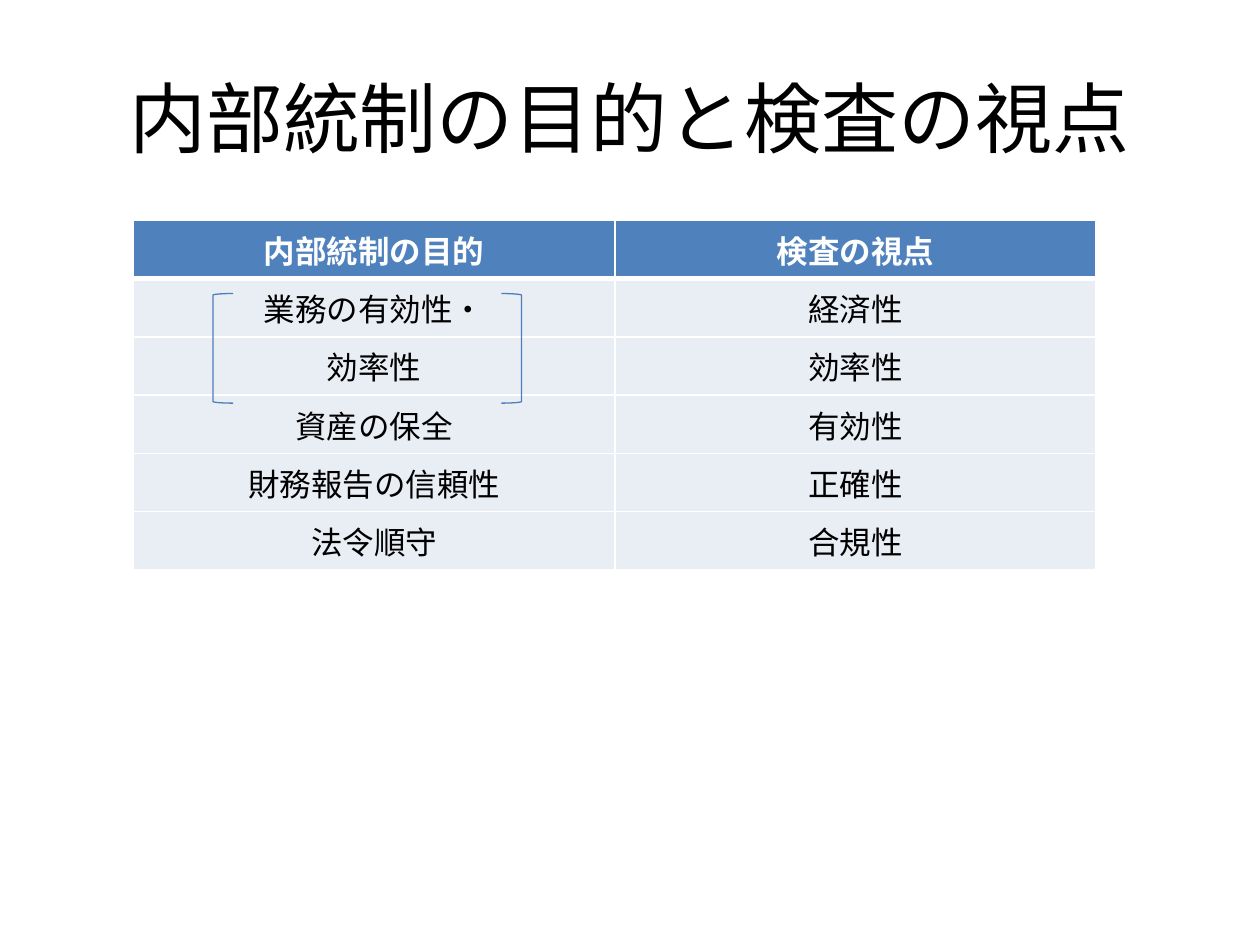
from dataclasses import dataclass

from lxml.etree import SubElement
from pptx import Presentation
from pptx.dml.color import RGBColor as RGB
from pptx.enum.shapes import MSO_SHAPE as Shape
from pptx.enum.text import MSO_ANCHOR as Anchor, PP_ALIGN as Align
from pptx.oxml.ns import qn
from pptx.util import Inches, Pt


@dataclass(frozen=True)
class Theme:
    font: str = "Calibri"
    title_size: int = 44
    cell_size: int = 18
    text: str = "000000"
    white: str = "FFFFFF"
    header: str = "4F81BD"
    band: str = "E9EDF4"
    bracket: str = "4B7EBC"


class SlideBuilder:
    def __init__(self, slide, theme):
        self.slide, self.theme = slide, theme

    def add_text(self, tf, text, size, color, bold=False):
        p = tf.paragraphs[0]
        p.alignment = Align.CENTER
        r = p.add_run()
        r.text = text
        style = {"name": self.theme.font, "size": Pt(size), "bold": bold}
        for name, value in style.items():
            setattr(r.font, name, value)
        r.font.color.rgb = RGB.from_string(color)

    def title(self, text, *box):
        sp = self.slide.shapes.title
        for name, value in zip(("left", "top", "width", "height"), box):
            setattr(sp, name, Inches(value))
        sp.text_frame.vertical_anchor = Anchor.MIDDLE
        self.add_text(sp.text_frame, text, self.theme.title_size, self.theme.text)

    def borders(self, cell, widths):
        """Draw cell edges; must run before the fill is set."""
        tc_pr = cell._tc.get_or_add_tcPr()
        for side, width in widths.items():
            ln = SubElement(tc_pr, qn(f"a:ln{side}"), w=str(Pt(width)))
            fill = SubElement(ln, qn("a:solidFill"))
            SubElement(fill, qn("a:srgbClr"), val=self.theme.white)

    def table(self, rows, *box):
        t = self.theme
        frame = self.slide.shapes.add_table(len(rows), len(rows[0]), *map(Inches, box))
        for i, row in enumerate(rows):
            header = i == 0
            for j, text in enumerate(row):
                cell = frame.table.cell(i, j)
                self.borders(cell, {"L": 1, "R": 1, "T": 3 if i == 1 else 1,
                                    "B": 3 if header else 1})
                cell.fill.solid()
                cell.fill.fore_color.rgb = RGB.from_string(t.header if header else t.band)
                self.add_text(cell.text_frame, text, t.cell_size,
                              t.white if header else t.text, header)

    def bracket(self, kind, *box):
        sp = self.slide.shapes.add_shape(kind, *map(Inches, box))
        sp.shadow.inherit = False
        sp.fill.background()
        sp.line.color.rgb = RGB.from_string(self.theme.bracket)
        sp.line.width = Pt(0.75)


def main():
    prs = Presentation()
    prs.slide_width, prs.slide_height = Inches(10), Inches(7.5)
    s = SlideBuilder(prs.slides.add_slide(prs.slide_layouts[5]), Theme())

    # Title
    s.title("内部統制の目的と検査の視点", 0.5, 0.3, 9, 1.25)

    # Objectives against inspection viewpoints
    s.table([
        ("内部統制の目的", "検査の視点"),
        ("業務の有効性・", "経済性"),
        ("効率性", "効率性"),
        ("資産の保全", "有効性"),
        ("財務報告の信頼性", "正確性"),
        ("法令順守", "合規性"),
    ], 1.06, 1.75, 7.64, 2.43)

    # Brackets joining the first two objectives
    for kind, left in ((Shape.LEFT_BRACKET, 1.69), (Shape.RIGHT_BRACKET, 3.98)):
        s.bracket(kind, left, 2.33, 0.16, 0.87)

    prs.save("out.pptx")


if __name__ == "__main__":
    main()
